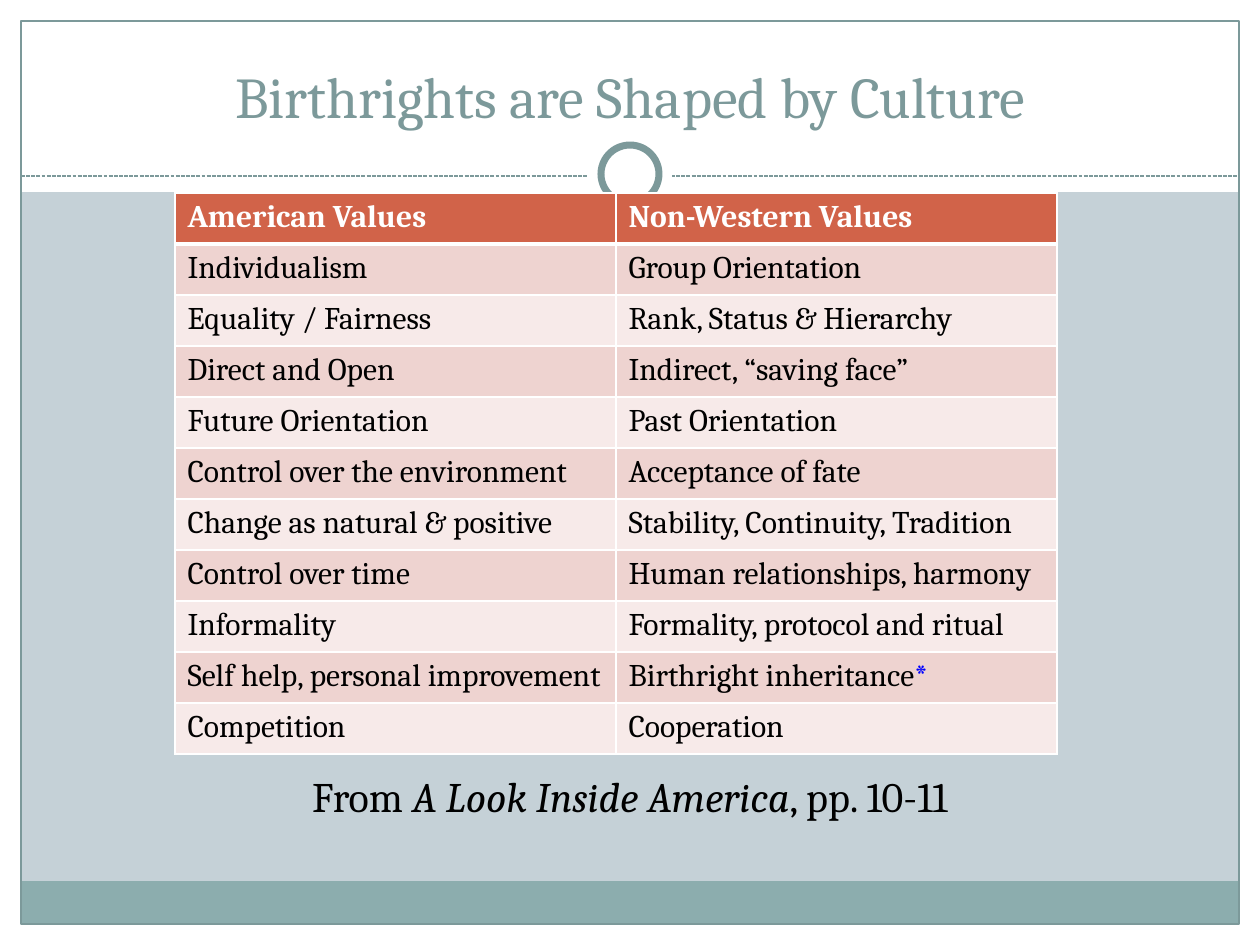
from lxml.etree import SubElement
from pptx import Presentation
from pptx.dml.color import RGBColor
from pptx.enum.dml import MSO_LINE_DASH_STYLE as Dash
from pptx.enum.shapes import MSO_CONNECTOR as Connector, MSO_SHAPE as Shape
from pptx.enum.text import MSO_ANCHOR as Anchor, PP_ALIGN as Align
from pptx.oxml.ns import qn
from pptx.util import Emu, Pt

FONT = "Cambria"
WHITE = RGBColor(0xFF, 0xFF, 0xFF)
BLACK = RGBColor(0, 0, 0)
BLUE = RGBColor(0, 0, 0xFF)
BACKDROP = RGBColor(0xC5, 0xD1, 0xD7)
TEAL = RGBColor(0x8C, 0xAD, 0xAE)
SLATE = RGBColor(0x7C, 0x99, 0x9A)
RUST = RGBColor(0xD1, 0x63, 0x49)
BANDS = (RGBColor(0xEE, 0xD3, 0xD0), RGBColor(0xF7, 0xEA, 0xE9))

WIDTH, HEIGHT = 1260, 945
MARGIN = 21
HEADER_HEIGHT = 192
DIVIDER_Y = 176
RING_CENTER = (630, 174)
COLUMN_WIDTH, ROW_HEIGHT = 441, 51

VALUES = [
    ("American Values", "Non-Western Values"),
    ("Individualism", "Group Orientation"),
    ("Equality / Fairness", "Rank, Status & Hierarchy"),
    ("Direct and Open", "Indirect, “saving face”"),
    ("Future Orientation", "Past Orientation"),
    ("Control over the environment", "Acceptance of fate"),
    ("Change as natural & positive", "Stability, Continuity, Tradition"),
    ("Control over time", "Human relationships, harmony"),
    ("Informality", "Formality, protocol and ritual"),
    ("Self help, personal improvement", "Birthright inheritance*"),
    ("Competition", "Cooperation"),
]


def px(length):
    return Emu(round(length * 914400 / 126))


def add_run(paragraph, text, size, color, bold=False, italic=False):
    run = paragraph.add_run()
    run.text = text
    font = run.font
    font.name, font.size, font.bold, font.italic = FONT, Pt(size), bold, italic
    font.color.rgb = color


def add_panel(slide, kind, box, fill=None, line=None, weight=0.75):
    panel = slide.shapes.add_shape(kind, *map(px, box))
    panel.shadow.inherit = False
    if fill is None:
        panel.fill.background()
    else:
        panel.fill.solid()
        panel.fill.fore_color.rgb = fill
    if line is None:
        panel.line.fill.background()
    else:
        panel.line.color.rgb = line
        panel.line.width = Pt(weight)


def add_circle(slide, diameter, **style):
    x, y = RING_CENTER
    box = (x - diameter / 2, y - diameter / 2, diameter, diameter)
    add_panel(slide, Shape.OVAL, box, fill=WHITE, **style)


def add_divider(slide):
    divider = slide.shapes.add_connector(
        Connector.STRAIGHT, px(MARGIN), px(DIVIDER_Y), px(WIDTH - MARGIN), px(DIVIDER_Y))
    divider.line.color.rgb = SLATE
    divider.line.width = Pt(0.75)
    divider.line.dash_style = Dash.SQUARE_DOT
    SubElement(divider._element.spPr, qn("a:effectLst"))


def add_centered_text(slide, box, anchor, runs, size, color):
    frame = slide.shapes.add_textbox(*map(px, box)).text_frame
    frame.word_wrap = True
    frame.vertical_anchor = anchor
    paragraph = frame.paragraphs[0]
    paragraph.alignment = Align.CENTER
    for text, italic in runs:
        add_run(paragraph, text, size, color, italic=italic)


def set_borders(cell, top, bottom):
    properties = cell._tc.get_or_add_tcPr()
    for side, weight in (("L", 1), ("R", 1), ("T", top), ("B", bottom)):
        border = SubElement(properties, qn(f"a:ln{side}"), w=str(Pt(weight)))
        fill = SubElement(border, qn("a:solidFill"))
        SubElement(fill, qn("a:srgbClr"), val=str(WHITE))


def fill_cell(cell, text, row):
    is_header = row == 0
    set_borders(cell, 3 if row == 1 else 1, 3 if is_header else 1)
    cell.fill.solid()
    cell.fill.fore_color.rgb = RUST if is_header else BANDS[(row - 1) % 2]
    paragraph = cell.text_frame.paragraphs[0]
    label, star, _ = text.partition("*")
    add_run(paragraph, label, 18, WHITE if is_header else BLACK, bold=is_header)
    if star:
        add_run(paragraph, star, 18, BLUE)


def add_values_table(slide):
    table = slide.shapes.add_table(
        len(VALUES), 2, px(175), px(193),
        px(2 * COLUMN_WIDTH), px(len(VALUES) * ROW_HEIGHT)).table
    table.horz_banding = False
    for column in table.columns:
        column.width = px(COLUMN_WIDTH)
    for row, pair in enumerate(VALUES):
        table.rows[row].height = px(ROW_HEIGHT)
        for column, text in enumerate(pair):
            fill_cell(table.cell(row, column), text, row)


def add_frame(slide):
    inner_width, inner_height = WIDTH - 2 * MARGIN, HEIGHT - 2 * MARGIN
    for edge in (
        (0, HEIGHT - MARGIN, WIDTH, MARGIN),
        (0, 0, WIDTH, HEADER_HEIGHT),
        (0, 0, MARGIN, HEIGHT),
        (WIDTH - MARGIN, 0, MARGIN, HEIGHT),
    ):
        add_panel(slide, Shape.RECTANGLE, edge, fill=WHITE)
    add_panel(slide, Shape.RECTANGLE, (MARGIN, 881, inner_width, 43), fill=TEAL)
    add_panel(slide, Shape.RECTANGLE, (MARGIN, MARGIN, inner_width, inner_height), line=SLATE)
    add_divider(slide)
    add_circle(slide, 84)
    add_circle(slide, 58, line=SLATE, weight=4)


def main():
    presentation = Presentation()
    presentation.slide_width, presentation.slide_height = px(WIDTH), px(HEIGHT)
    slide = presentation.slides.add_slide(presentation.slide_layouts[6])
    slide.background.fill.solid()
    slide.background.fill.fore_color.rgb = BACKDROP
    add_frame(slide)
    add_centered_text(slide, (42, 32, 1176, 104), Anchor.BOTTOM,
                      [("Birthrights are Shaped by Culture", False)], 33, SLATE)
    add_centered_text(slide, (63, 765, 1134, 62), Anchor.MIDDLE,
                      [("From ", False), ("A Look Inside America", True), (", pp. 10-11", False)],
                      24, BLACK)
    add_values_table(slide)
    presentation.save("out.pptx")


if __name__ == "__main__":
    main()
